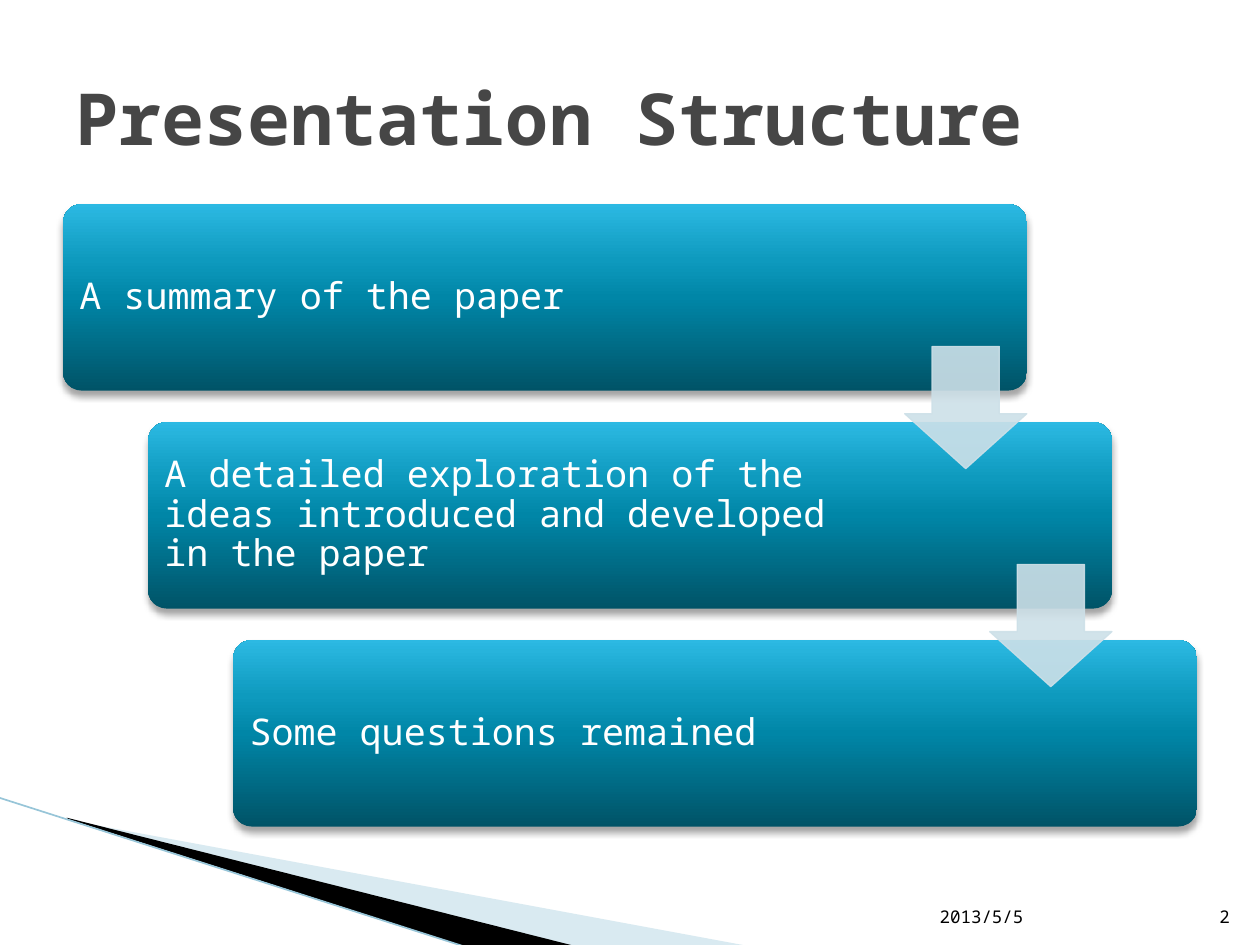
from lxml import etree
from pptx import Presentation
from pptx.dml.color import RGBColor
from pptx.enum.shapes import MSO_CONNECTOR, MSO_SHAPE
from pptx.enum.text import MSO_ANCHOR, PP_ALIGN
from pptx.oxml import parse_xml
from pptx.oxml.ns import nsdecls, qn
from pptx.util import Inches, Pt

FONT = "Noto Sans Mono"
WHITE = RGBColor(0xFF, 0xFF, 0xFF)
BLACK = RGBColor(0x00, 0x00, 0x00)
GREY = RGBColor(0x46, 0x46, 0x46)
SWEEP_BLUE = RGBColor(0xA0, 0xCB, 0xDC)
SWEEP_LINE = RGBColor(0x97, 0xC5, 0xD8)
ARROW_BLUE = RGBColor(0xCD, 0xE0, 0xE8)
GRADIENT = [
    (0, RGBColor(0x00, 0x53, 0x67)),
    (50, RGBColor(0x00, 0x86, 0xA7)),
    (70, RGBColor(0x0E, 0x9A, 0xBE)),
    (100, RGBColor(0x2C, 0xB9, 0xE3)),
]


def set_opacity(fill_parent, percent):
    for color in fill_parent.findall(qn("a:solidFill") + "/" + qn("a:srgbClr")):
        etree.SubElement(color, qn("a:alpha")).set("val", str(percent * 1000))


def add_text(left, top, width, height, text, size, color, anchor):
    box = page.shapes.add_textbox(Inches(left), Inches(top), Inches(width), Inches(height))
    frame = box.text_frame
    frame.word_wrap = True
    frame.vertical_anchor = anchor
    para = frame.paragraphs[0]
    para.text = text
    para.font.name = FONT
    para.font.size = Pt(size)
    para.font.color.rgb = color
    return frame


deck = Presentation()
deck.slide_width, deck.slide_height = Inches(10), Inches(7.5)
page = deck.slides.add_slide(deck.slide_layouts[5])

# Title
title = page.shapes.title
title.left, title.top, title.width, title.height = (Inches(n) for n in (0.5, 0.3, 9, 1.25))
title.text_frame.text = "Presentation Structure"
title.text_frame.vertical_anchor = MSO_ANCHOR.MIDDLE
para = title.text_frame.paragraphs[0]
para.alignment = PP_ALIGN.LEFT
para.font.name = FONT
para.font.size = Pt(41)
para.font.bold = True
para.font.color.rgb = GREY

# Corner sweep
sweeps = [
    ([(0.55, 6.51), (5.95, 7.51), (4.56, 7.51), (0.55, 6.5)], SWEEP_BLUE, 40),
    ([(0.53, 6.49), (4.57, 7.51), (3.72, 7.52), (0.54, 6.5)], BLACK, 100),
]
for points, color, opacity in sweeps:
    corners = [(Inches(x), Inches(y)) for x, y in points]
    builder = page.shapes.build_freeform(*corners[0])
    builder.add_line_segments(corners[1:], close=True)
    sweep = builder.convert_to_shape()
    sweep.shadow.inherit = False
    sweep.fill.solid()
    sweep.fill.fore_color.rgb = color
    sweep.line.fill.background()
    if opacity < 100:
        set_opacity(sweep.element.spPr, opacity)

edge = page.shapes.add_connector(
    MSO_CONNECTOR.STRAIGHT, Inches(-0.01), Inches(6.33), Inches(3.71), Inches(7.52))
edge.line.color.rgb = SWEEP_LINE
edge.line.width = Pt(0.95)
etree.SubElement(edge.element.spPr, qn("a:effectLst"))

# Staggered steps
STEP_X, STEP_Y = 0.675, 1.73
steps = [
    ("A summary of the paper", 6.05),
    ("A detailed exploration of the ideas introduced and developed in the paper", 5.92),
    ("Some questions remained", 5.92),
]
stops = "".join(
    f'<a:gs pos="{pos * 1000}"><a:srgbClr val="{color}"/></a:gs>' for pos, color in GRADIENT)
gradient_xml = (f'<a:gradFill {nsdecls("a")} rotWithShape="1"><a:gsLst>{stops}</a:gsLst>'
                '<a:lin ang="16200000" scaled="0"/></a:gradFill>')
shadow_xml = (f'<a:effectLst {nsdecls("a")}><a:outerShdw blurRad="{Pt(4)}" dist="{Pt(3)}" '
              'dir="5400000" rotWithShape="0"><a:srgbClr val="000000"><a:alpha val="35000"/>'
              '</a:srgbClr></a:outerShdw></a:effectLst>')
for i, (text, text_width) in enumerate(steps):
    left, top = 0.5 + i * STEP_X, 1.62 + i * STEP_Y
    card = page.shapes.add_shape(
        MSO_SHAPE.ROUNDED_RECTANGLE, Inches(left), Inches(top), Inches(7.65), Inches(1.48))
    card.adjustments[0] = 0.1
    card.line.fill.background()
    properties = card.element.spPr
    properties.find(qn("a:prstGeom")).addnext(parse_xml(gradient_xml))
    properties.append(parse_xml(shadow_xml))

    frame = add_text(left + 0.04, top + 0.04, text_width, 1.4, text, 21, WHITE, MSO_ANCHOR.MIDDLE)
    frame.margin_left = frame.margin_right = Inches(0.09)
    frame.margin_top = frame.margin_bottom = Inches(0.09)
    frame.paragraphs[0].line_spacing = 0.9

# Arrows between the steps
for i in range(len(steps) - 1):
    arrow = page.shapes.add_shape(
        MSO_SHAPE.DOWN_ARROW, Inches(7.18 + i * STEP_X), Inches(2.75 + i * STEP_Y),
        Inches(0.97), Inches(0.97))
    arrow.adjustments[0], arrow.adjustments[1] = 0.55, 0.45
    arrow.shadow.inherit = False
    arrow.fill.solid()
    arrow.fill.fore_color.rgb = ARROW_BLUE
    arrow.line.color.rgb = ARROW_BLUE
    arrow.line.width = Pt(0.75)
    set_opacity(arrow.element.spPr, 90)
    set_opacity(arrow.element.spPr.find(qn("a:ln")), 90)

# Date and page number
add_text(7.36, 7.01, 2.1, 0.4, "2013/5/5", 10, BLACK, MSO_ANCHOR.BOTTOM)
number = add_text(9.46, 7.01, 0.4, 0.4, "2", 10, BLACK, MSO_ANCHOR.BOTTOM)
number.paragraphs[0].alignment = PP_ALIGN.RIGHT

deck.save("out.pptx")
